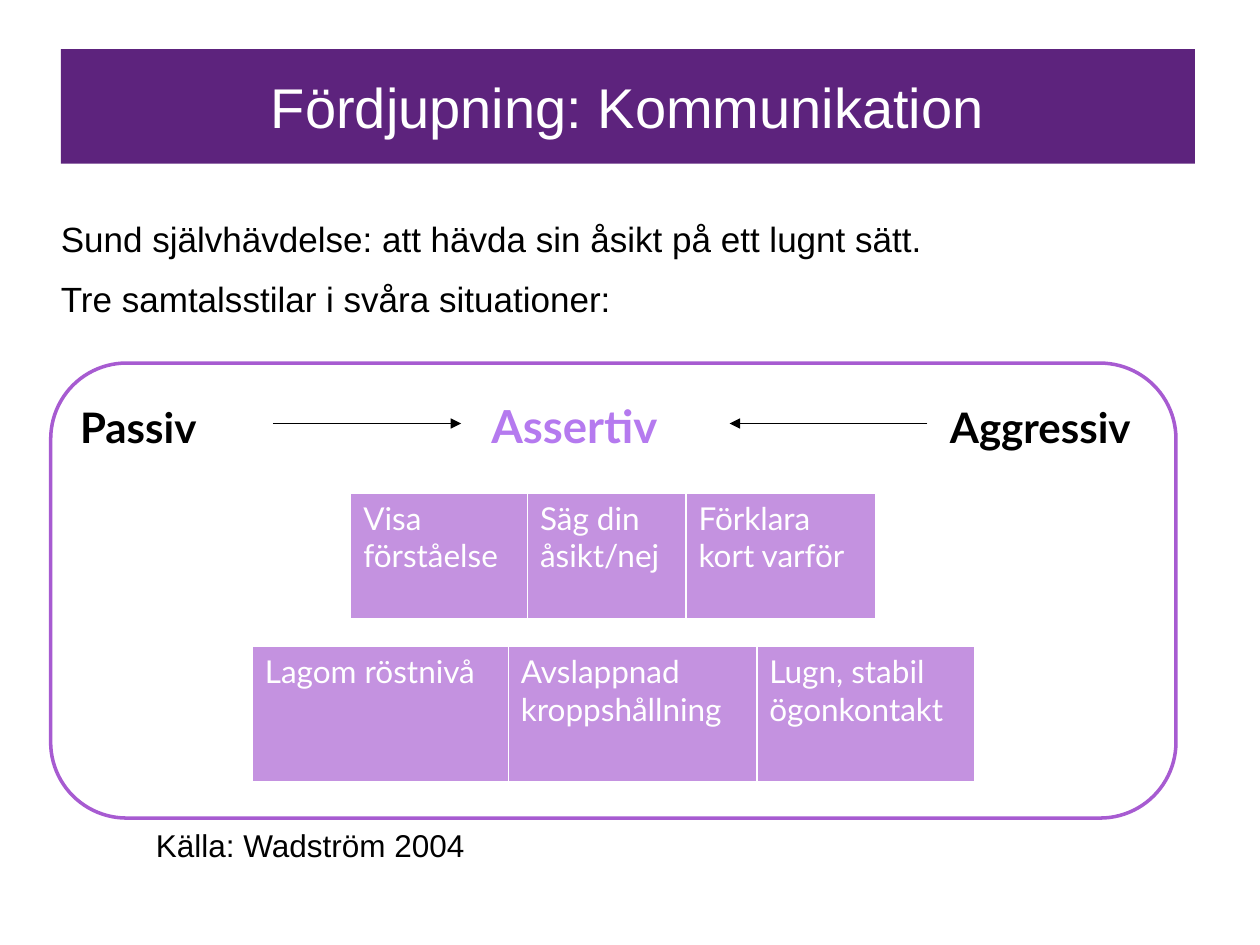
from lxml.etree import SubElement
from pptx import Presentation
from pptx.dml.color import RGBColor
from pptx.enum.shapes import MSO_CONNECTOR as Connector, MSO_SHAPE as Shape
from pptx.enum.text import MSO_ANCHOR as Anchor, PP_ALIGN as Align
from pptx.oxml.ns import qn
from pptx.util import Pt


class SlideBuilder:
    """Holds the colours, fonts and current slide, and draws each kind of element."""

    colors = {
        "title": "5D237D", "frame": "A75BD1", "cell": "C492E0",
        "accent": "B57AEF", "white": "FFFFFF", "black": "000000",
    }
    body_font = "Arial"
    label_font = "Lato"

    def __init__(self, slide):
        self.slide = slide

    def color(self, key):
        return RGBColor.from_string(self.colors[key])

    def style(self, font, size, color="black", name=body_font, bold=False):
        font.name, font.size, font.bold = name, Pt(size), bold
        font.color.rgb = self.color(color)

    def box(self, kind, bounds, fill=None, line=None):
        shape = self.slide.shapes.add_shape(kind, *map(Pt, bounds))
        shape.shadow.inherit = False
        if fill:
            shape.fill.solid()
            shape.fill.fore_color.rgb = self.color(fill)
        else:
            shape.fill.background()
        if line:
            shape.line.color.rgb = self.color(line)
            shape.line.width = Pt(2)
        else:
            shape.line.fill.background()
        return shape

    def title(self, bounds, text):
        banner = self.box(Shape.RECTANGLE, bounds, fill="title")
        banner.text_frame.vertical_anchor = Anchor.MIDDLE
        heading = banner.text_frame.paragraphs[0]
        heading.text = text
        heading.alignment = Align.CENTER
        self.style(heading.font, 32, "white")

    def text(self, bounds, lines, size, inset=True):
        frame = self.slide.shapes.add_textbox(*map(Pt, bounds)).text_frame
        frame.word_wrap = True
        if not inset:
            frame.margin_left = frame.margin_top = 0
            frame.margin_right = frame.margin_bottom = 0
        for index, line in enumerate(lines):
            paragraph = frame.add_paragraph() if index else frame.paragraphs[0]
            paragraph.text = line
            paragraph.space_before = Pt(4.6 if index else 0)
            paragraph.space_after = Pt(6 if len(lines) > 1 else 0)
            self.style(paragraph.font, size)
        return frame

    def tabbed_labels(self, frame, labels, space_before):
        paragraph = frame.add_paragraph()
        paragraph.space_before = Pt(space_before)
        tabs = SubElement(paragraph._p.get_or_add_pPr(), qn("a:tabLst"))
        for position, text, size, color in labels:
            SubElement(tabs, qn("a:tab"), pos=str(Pt(position)), algn="l")
            run = paragraph.add_run()
            run.text = "\t" + text
            self.style(run.font, size, color, self.label_font, bold=True)

    def table(self, left, top, height, columns):
        width = sum(column for column, _ in columns)
        bounds = map(Pt, (left, top, width, height))
        table = self.slide.shapes.add_table(1, len(columns), *bounds).table
        table.horz_banding = False
        for index, (column, text) in enumerate(columns):
            table.columns[index].width = Pt(column)
            cell = table.cell(0, index)
            cell.fill.solid()
            cell.fill.fore_color.rgb = self.color("cell")
            cell.text = text
            self.style(cell.text_frame.paragraphs[0].font, 18, "white", self.label_font)

    def arrow(self, start, end, y):
        points = map(Pt, (start, y, end, y))
        arrow = self.slide.shapes.add_connector(Connector.STRAIGHT, *points)
        arrow.line.color.rgb = self.color("black")
        arrow.line.width = Pt(0.25)
        SubElement(arrow.line._get_or_add_ln(), qn("a:tailEnd"), type="triangle")
        SubElement(arrow._element.spPr, qn("a:effectLst"))


def main():
    presentation = Presentation()
    presentation.slide_width, presentation.slide_height = Pt(720), Pt(540)
    builder = SlideBuilder(presentation.slides.add_slide(presentation.slide_layouts[6]))

    builder.title((34.8, 28, 648, 65.5), "Fördjupning: Kommunikation")
    body = builder.text((34.8, 124, 631, 345), [
        "Sund självhävdelse: att hävda sin åsikt på ett lugnt sätt.",
        "Tre samtalsstilar i svåra situationer:",
    ], 20, inset=False)
    builder.tabbed_labels(body, [
        (11, "Passiv", 24, "black"),
        (246, "Assertiv", 26, "accent"),
        (508, "Aggressiv", 24, "black"),
    ], space_before=39)

    builder.table(200.4, 281.6, 72, [
        (101, "Visa förståelse"), (90.6, "Säg din åsikt/nej"), (108.6, "Förklara kort varför"),
    ])
    builder.table(144.2, 369.4, 77.6, [
        (146.3, "Lagom röstnivå"), (142, "Avslappnad kroppshållning"),
        (124.8, "Lugn, stabil ögonkontakt"),
    ])
    builder.box(Shape.ROUNDED_RECTANGLE, (29, 207.5, 643, 260), line="frame")
    builder.arrow(530, 417, 242)
    builder.arrow(156, 263.5, 242)
    builder.text((82, 468.7, 533, 29), ["Källa: Wadström 2004"], 18)
    presentation.save("out.pptx")


if __name__ == "__main__":
    main()
